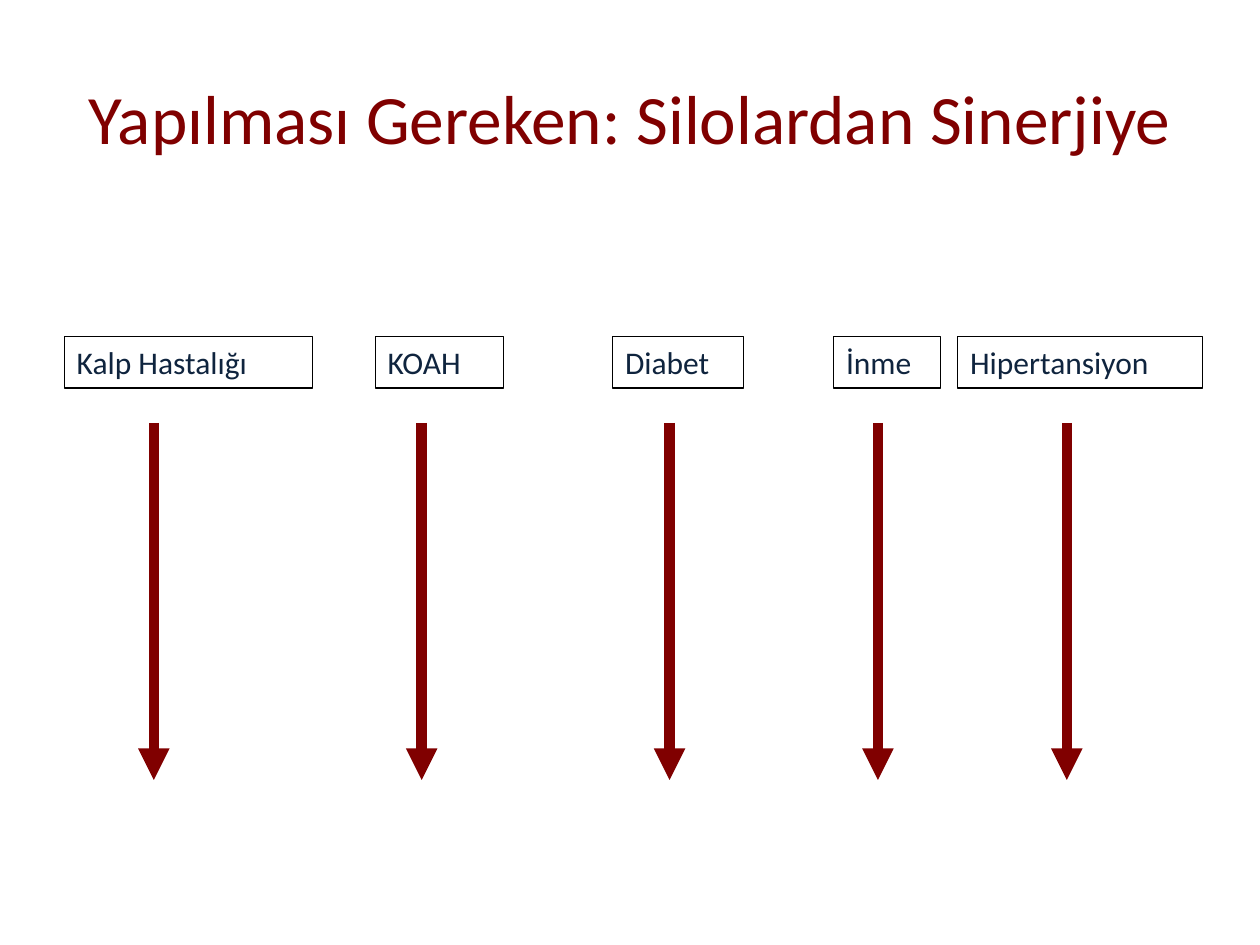
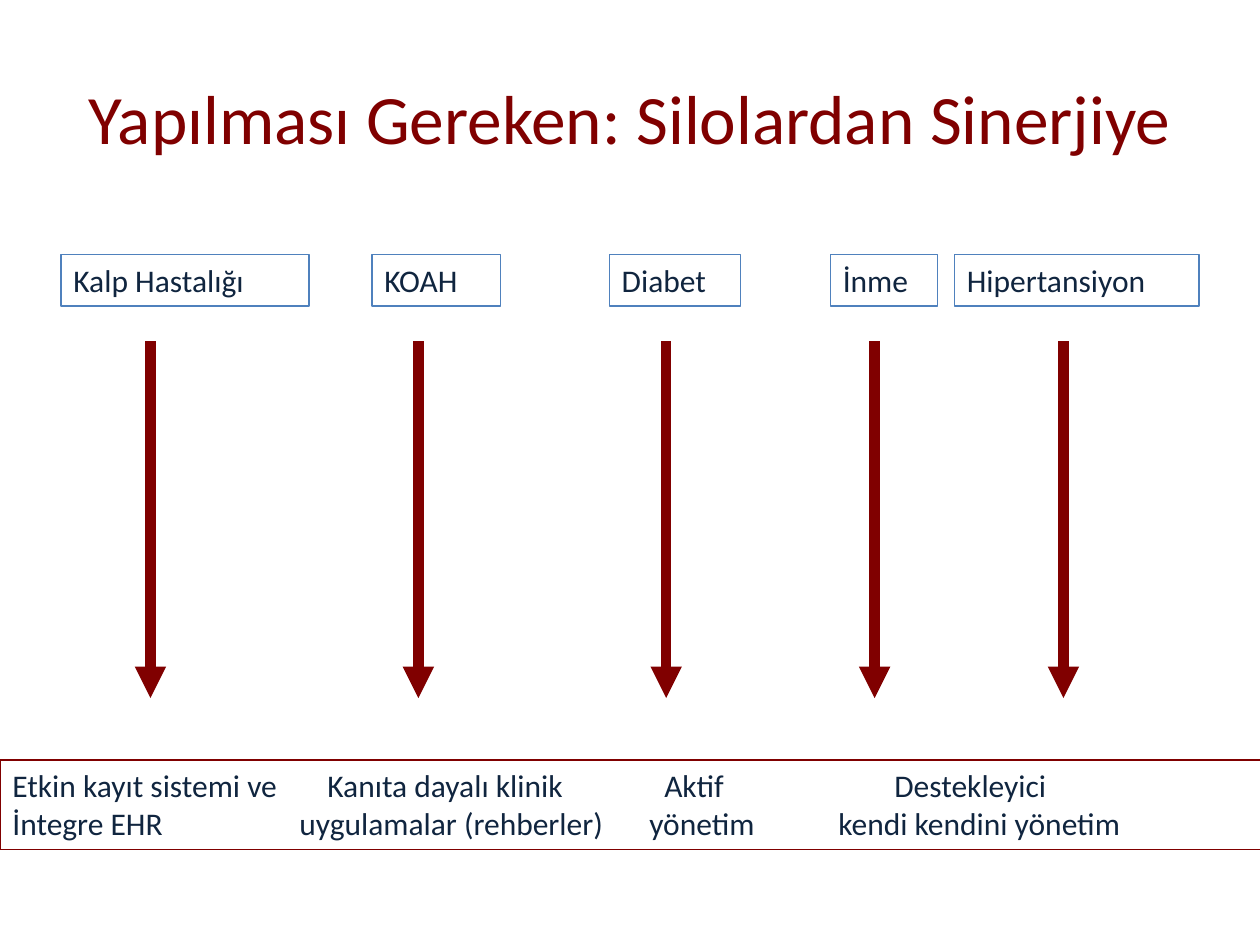
from pptx import Presentation
from pptx.dml.color import RGBColor
from pptx.enum.shapes import MSO_CONNECTOR as Link, MSO_SHAPE as Shape
from pptx.enum.text import MSO_ANCHOR as Anchor, PP_ALIGN as Align
from pptx.oxml.ns import qn
from pptx.util import Pt
from lxml.etree import SubElement

TITLE = "Yapılması Gereken: Silolardan Sinerjiye"
FONT = "Calibri"
RED = "800000"

# name, box left, box width, arrow x
SILOS = [
    ("Kalp Hastalığı", 36.8, 141.8, 87.9),
    ("KOAH", 214.4, 73.4, 241),
    ("Diabet", 350.1, 74.9, 382.6),
    ("İnme", 476.4, 61.2, 501.7),
    ("Hipertansiyon", 547.3, 139.8, 609.6),
]
# shift of the silos, top, box line, ink, whether the band shows
SLIDES = [
    (0, 192.2, "000000", "0F243E", False),
    (-1.9, 145.4, "4F81BD", "10253F", True),
]
# words of each band line, and the tab stops they start at
BAND = [
    (["Etkin kayıt sistemi ve", "Kanıta dayalı klinik", "Aktif", "Destekleyici"],
     [180, 372.5, 504]),
    (["İntegre EHR", "uygulamalar (rehberler)", "yönetim", "kendi kendini yönetim"],
     [164, 364, 472]),
]
BOX_H, GAP, ARROW_H = 29.5, 20, 204
BAND_TOP, BAND_W, BAND_H = 434.2, 720.7, 51.1


def color(code):
    return RGBColor.from_string(code)


def write(para, text, size, ink):
    run = para.add_run()
    run.text = text
    run.font.name, run.font.size = FONT, Pt(size)
    run.font.color.rgb = color(ink)


def set_tabs(para, stops):
    tabs = SubElement(para._p.get_or_add_pPr(), qn("a:tabLst"))
    for stop in stops:
        SubElement(tabs, qn("a:tab"), pos=str(int(Pt(stop))), algn="l")


def add_title(slide):
    frame = slide.shapes.add_textbox(Pt(36), Pt(21.6), Pt(648), Pt(90)).text_frame
    frame.word_wrap = True
    frame.vertical_anchor = Anchor.MIDDLE
    para = frame.paragraphs[0]
    para.alignment = Align.CENTER
    write(para, TITLE, 39.6, RED)


def add_box(slide, left, top, width, height, edge):
    """Add an outlined box and return its text frame."""
    box = slide.shapes.add_shape(Shape.RECTANGLE, Pt(left), Pt(top), Pt(width), Pt(height))
    box.shadow.inherit = False
    box.fill.background()
    box.line.color.rgb = color(edge)
    box.line.width = Pt(0.75)
    frame = box.text_frame
    frame.word_wrap = True
    frame.vertical_anchor = Anchor.TOP
    frame.paragraphs[0].alignment = Align.LEFT
    return frame


def add_arrow(slide, x, top):
    arrow = slide.shapes.add_connector(
        Link.STRAIGHT, Pt(x), Pt(top), Pt(x), Pt(top + ARROW_H))
    arrow.line.color.rgb = color(RED)
    arrow.line.width = Pt(6)
    SubElement(arrow.line._get_or_add_ln(), qn("a:tailEnd"), type="triangle")
    SubElement(arrow._element.spPr, qn("a:effectLst"))


def add_band(slide, ink):
    frame = add_box(slide, 0, BAND_TOP, BAND_W, BAND_H, RED)
    for row, (words, stops) in enumerate(BAND):
        para = frame.add_paragraph() if row else frame.paragraphs[0]
        para.alignment = Align.LEFT
        set_tabs(para, stops)
        write(para, "\t".join(words), 18, ink)


def main():
    deck = Presentation()
    deck.slide_width, deck.slide_height = Pt(720), Pt(540)
    for shift, top, edge, ink, band in SLIDES:
        slide = deck.slides.add_slide(deck.slide_layouts[6])
        add_title(slide)
        for name, left, width, x in SILOS:
            frame = add_box(slide, left + shift, top, width, BOX_H, edge)
            write(frame.paragraphs[0], name, 18, ink)
            add_arrow(slide, x + shift, top + BOX_H + GAP)
        if band:
            add_band(slide, ink)
    deck.save("out.pptx")


if __name__ == "__main__":
    main()
